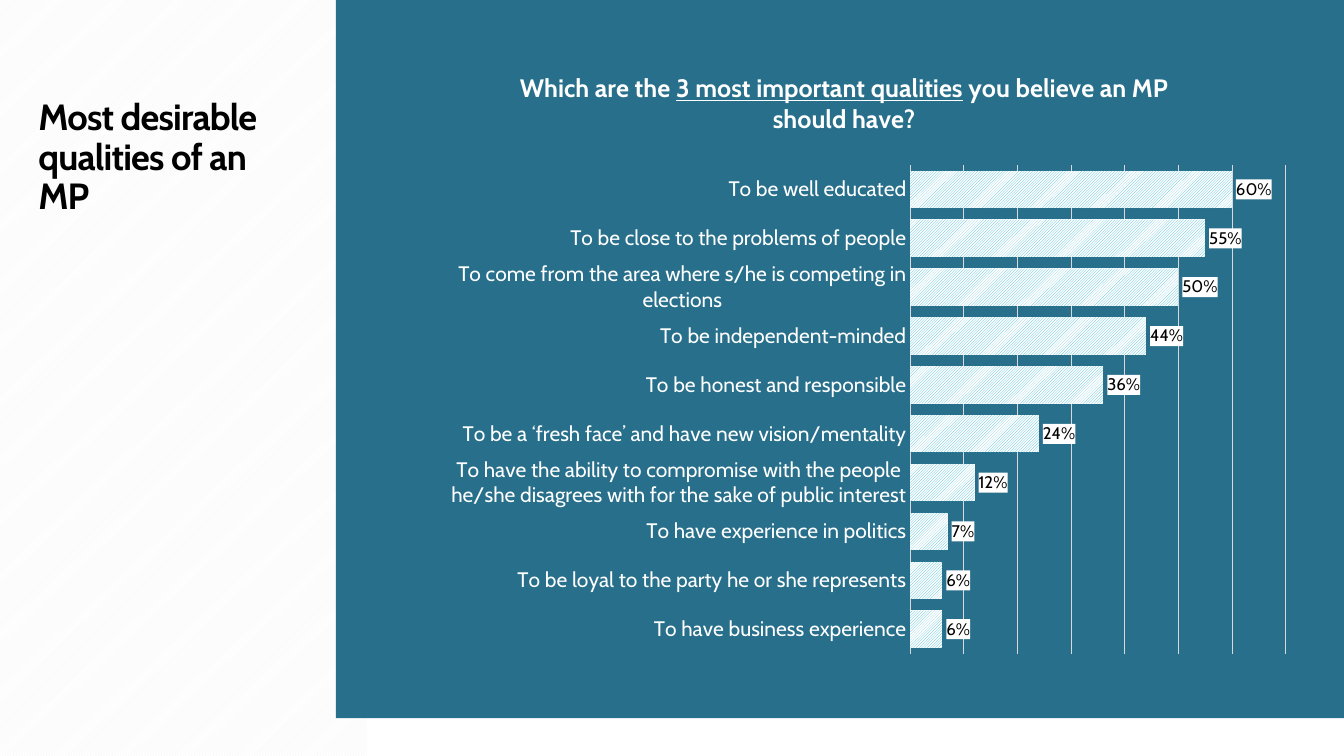
import dataclasses
import pptx
import pptx.chart.data
import pptx.dml.color
import pptx.enum.chart
import pptx.enum.dml
import pptx.enum.shapes
import pptx.enum.text
import pptx.oxml
import pptx.oxml.ns
import pptx.util

SPACE = pptx.oxml.ns.nsdecls("c", "a")
WIDE, HIGH = 13.33, 7.5


@dataclasses.dataclass(frozen=True)
class Theme:
    """Colours, font and type sizes of the slide."""
    font: str = "Cabin"
    panel: str = "276F8B"
    bar: str = "40BAD2"
    white: str = "FFFFFF"
    black: str = "000000"
    pale: str = "F2F2F2"
    grid: str = "D9D9D9"
    title: int = 26
    head: int = 18
    axis: int = 15
    label: int = 12


THEME = Theme()

DATA = {
    "To be well educated": 0.6,
    "To be close to the problems of people": 0.55,
    "To come from the area where s/he is competing in elections": 0.5,
    "To be independent-minded": 0.44,
    "To be honest and responsible": 0.36,
    "To be a ‘fresh face’ and have new vision/mentality": 0.24,
    "To have the ability to compromise with the people he/she disagrees "
    "with for the sake of public interest": 0.12,
    "To have experience in politics": 0.07,
    "To be loyal to the party he or she represents": 0.06,
    "To have business experience": 0.06,
}


def rgb(code):
    """Return a colour from its hex code."""
    return pptx.dml.color.RGBColor.from_string(code)


def style(font, size, color, bold=False):
    """Set the face, size, colour and weight of a font."""
    font.name = THEME.font
    font.size = pptx.util.Pt(size)
    font.bold = bold
    font.color.rgb = rgb(color)


def hatch(fill, kind, fore):
    """Fill with a coloured pattern on white."""
    fill.patterned()
    fill.pattern = kind
    fill.fore_color.rgb = rgb(fore)
    fill.back_color.rgb = rgb(THEME.white)


def rule(line):
    """Format a thin grey line."""
    line.color.rgb = rgb(THEME.grid)
    line.width = pptx.util.Pt(0.75)


def inches(box):
    """Turn a box in inches into lengths."""
    return [pptx.util.Inches(side) for side in box]


def block(slide, box):
    """Add a plain rectangle and return it."""
    shape = slide.shapes.add_shape(
        pptx.enum.shapes.MSO_SHAPE.RECTANGLE, *inches(box))
    shape.shadow.inherit = False
    shape.line.fill.background()
    return shape


def layout(parent, index, target="", **share):
    """Place a chart part by shares of the chart's size."""
    for old in parent.findall(pptx.oxml.ns.qn("c:layout")):
        parent.remove(old)
    parts = target and f'<c:layoutTarget val="{target}"/>'
    parts += "".join(f'<c:{side}Mode val="edge"/>' for side in "xy")
    parts += "".join(f'<c:{k} val="{v}"/>' for k, v in share.items())
    parent.insert(index, pptx.oxml.parse_xml(
        f"<c:layout {SPACE}><c:manualLayout>{parts}"
        "</c:manualLayout></c:layout>"))


def side(slide, box):
    """Build the hatched strip with the slide title."""
    left, top, width, height = box
    strip = block(slide, box)
    hatch(strip.fill, pptx.enum.dml.MSO_PATTERN.DARK_UPWARD_DIAGONAL,
          THEME.pale)
    title = slide.shapes.title
    title.left, title.top, title.width, title.height = inches(
        (left + 0.28, top + height / 8, width - 1.07, height * 0.49))
    frame = title.text_frame
    frame.text = "Most desirable qualities of an MP"
    frame.word_wrap = True
    frame.auto_size = pptx.enum.text.MSO_AUTO_SIZE.NONE
    frame.vertical_anchor = pptx.enum.text.MSO_ANCHOR.TOP
    line = frame.paragraphs[0]
    line.alignment = pptx.enum.text.PP_ALIGN.LEFT
    line.line_spacing = 0.9
    style(line.font, THEME.title, THEME.black, True)
    line.runs[0].font._element.set("spc", "-60")
    slide.shapes._spTree.append(title.element)


def heading(chart):
    """Write the chart's question with its underlined part."""
    chart.has_title = True
    line = chart.chart_title.text_frame.paragraphs[0]
    for text, under in (("Which are the ", False),
                        ("3 most important qualities", True),
                        (" you believe an MP should have?", False)):
        run = line.add_run()
        run.text = text
        run.font.underline = under
    style(line.font, THEME.head, THEME.white, True)
    layout(chart.chart_title._element, 1, x=0.12, y=0.01)


def axes(chart):
    """Format the category names and the grid."""
    names, scale = chart.category_axis, chart.value_axis
    names.reverse_order = True
    names.major_tick_mark = pptx.enum.chart.XL_TICK_MARK.NONE
    names.has_major_gridlines = False
    rule(names.format.line)
    style(names.tick_labels.font, THEME.axis, THEME.white)
    scale.visible = False
    scale.minimum_scale, scale.maximum_scale = 0, 0.7
    scale.major_unit = 0.1
    scale.has_major_gridlines = True
    rule(scale.major_gridlines.format.line)


def bars(plot):
    """Format the bars and their white value labels."""
    plot.gap_width, plot.overlap = 30, 60
    plot.vary_by_categories = False
    hatch(plot.series[0].format.fill,
          pptx.enum.dml.MSO_PATTERN.LIGHT_UPWARD_DIAGONAL, THEME.bar)
    plot.has_data_labels = True
    labels = plot.data_labels
    labels.show_value = True
    labels.number_format = "0%"
    labels.number_format_is_linked = False
    labels.position = pptx.enum.chart.XL_LABEL_POSITION.OUTSIDE_END
    style(labels.font, THEME.label, THEME.black)
    labels._element.find(pptx.oxml.ns.qn("c:txPr")).addprevious(
        pptx.oxml.parse_xml(
            f'<c:spPr {SPACE}><a:solidFill><a:srgbClr val="{THEME.white}"/>'
            "</a:solidFill></c:spPr>"))


def panel(slide, box):
    """Build the blue panel with the bar chart."""
    left, top, width, height = box
    block(slide, box).fill.solid()
    back = slide.shapes[-1]
    back.fill.fore_color.rgb = rgb(THEME.panel)
    data = pptx.chart.data.CategoryChartData(number_format="0%")
    data.categories = list(DATA)
    data.add_series("Series 1", list(DATA.values()))
    chart = slide.shapes.add_chart(
        pptx.enum.chart.XL_CHART_TYPE.BAR_CLUSTERED,
        *inches((left + 0.73, top + 0.62, width - 1.13, height - 1.14)),
        data).chart
    chart.has_legend = False
    style(chart.font, THEME.label, THEME.white)
    heading(chart)
    axes(chart)
    bars(chart.plots[0])
    area = chart._chartSpace.find(".//" + pptx.oxml.ns.qn("c:plotArea"))
    layout(area, 0, "inner", x=0.56, y=0.17, w=0.42, h=0.81)


def main():
    """Build and save the slide."""
    deck = pptx.Presentation()
    deck.slide_width, deck.slide_height = inches((WIDE, HIGH))
    slide = deck.slides.add_slide(deck.slide_layouts[5])
    side(slide, (0, 0, 3.64, HIGH))
    panel(slide, (WIDE / 4, 0, WIDE * 3 / 4, HIGH * 0.95))
    deck.save("out.pptx")


if __name__ == "__main__":
    main()
